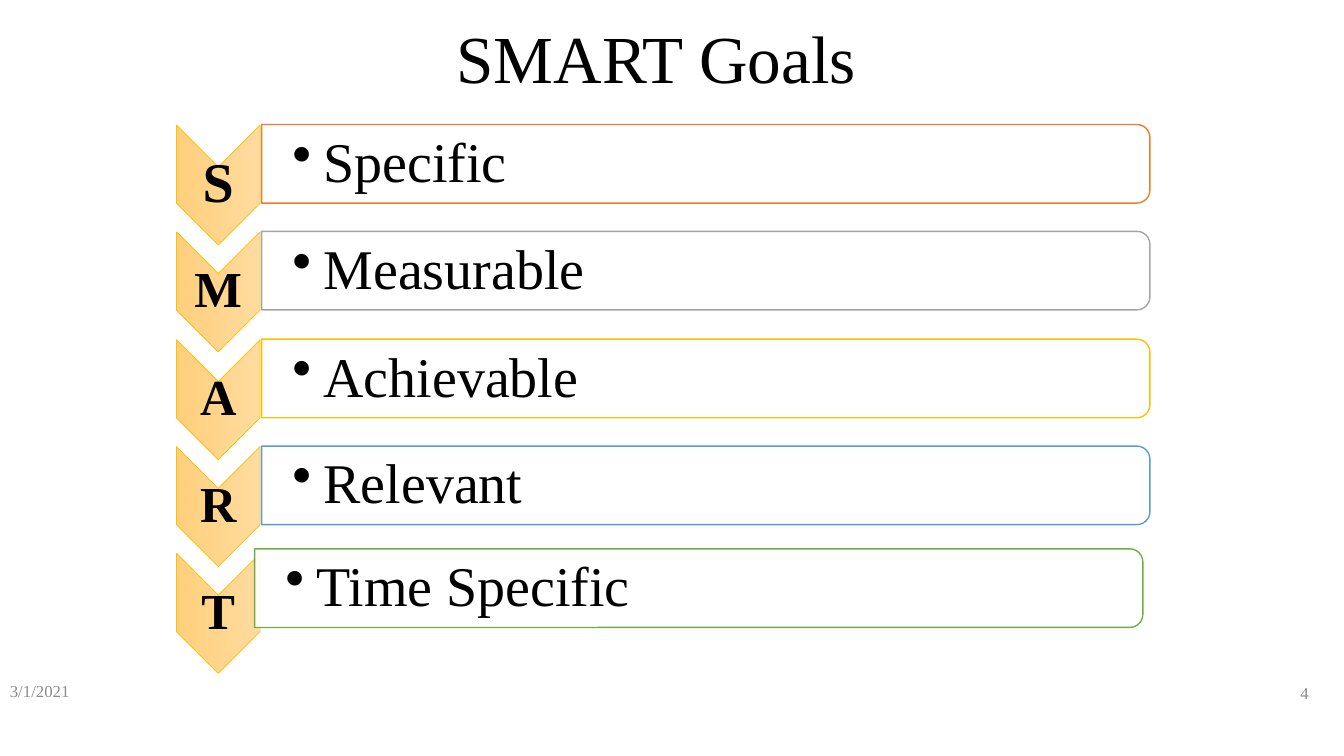
from lxml import etree
from pptx import Presentation
from pptx.dml.color import RGBColor
from pptx.enum.shapes import MSO_SHAPE
from pptx.enum.text import MSO_ANCHOR, PP_ALIGN
from pptx.oxml.ns import qn
from pptx.util import Pt

PX = 9144  # 100 px to the inch
FONT = "Times New Roman"
CHEVRON, BAR = MSO_SHAPE.CHEVRON, MSO_SHAPE.ROUND_2_SAME_RECTANGLE
MIDDLE = MSO_ANCHOR.MIDDLE
LEFT, CENTER, RIGHT = PP_ALIGN.LEFT, PP_ALIGN.CENTER, PP_ALIGN.RIGHT
COLORS = {
    "text": "000000", "footer": "8C8C8C", "bar": "FFFFFF",
    "chevron start": "FFDB9E", "chevron end": "FFD07C", "chevron line": "FFC000",
}
# letter, letter size, goal, bar outline, shift of the bar in px
GOALS = [
    ("S", 40, "Specific", "ED7D31", (0, 0)),
    ("M", 36, "Measurable", "A5A5A5", (0, 0)),
    ("A", 36, "Achievable", "FFC000", (0, 0)),
    ("R", 36, "Relevant", "5B9BD5", (0, 0)),
    ("T", 36, "Time Specific", "70AD47", (-7, -4)),
]
ROW_TOP, ROW_PITCH = 142, 106.3
BULLET_INDENT = 31


def add_text(box, text, size, align, color="text", bold=False, insets=None):
    """Place the box and write one paragraph in it; insets are (left, other sides)."""
    shape = slide.shapes.add_textbox(*(value * PX for value in box))
    frame = shape.text_frame
    frame.word_wrap = True
    frame.vertical_anchor = MIDDLE
    if insets:
        frame.margin_left = insets[0] * PX
        frame.margin_top = frame.margin_right = frame.margin_bottom = insets[1] * PX
    frame.text = text
    paragraph = frame.paragraphs[0]
    paragraph.alignment = align
    font = paragraph.runs[0].font
    font.name, font.size, font.bold = FONT, Pt(size), bold
    font.color.rgb = RGBColor.from_string(COLORS[color])
    return paragraph


def add_rotated_shape(kind, box, line_color, line_width):
    shape = slide.shapes.add_shape(kind, *(value * PX for value in box))
    shape.rotation = 90
    shape.shadow.inherit = False
    shape.line.color.rgb = RGBColor.from_string(line_color)
    shape.line.width = Pt(line_width)
    return shape


presentation = Presentation()
presentation.slide_width = 1333 * PX
presentation.slide_height = 750 * PX
slide = presentation.slides.add_slide(presentation.slide_layouts[5])

title = slide.shapes.title
title.left, title.top, title.width, title.height = 79 * PX, 0, 1144 * PX, 123 * PX
title.text_frame.text = "SMART Goals"
title.text_frame.vertical_anchor = MIDDLE
title_paragraph = title.text_frame.paragraphs[0]
title_paragraph.alignment = CENTER
title_paragraph.line_spacing = 0.9
title_font = title_paragraph.runs[0].font
title_font.name, title_font.size = FONT, Pt(48)
title_font.color.rgb = RGBColor.from_string(COLORS["text"])

add_text((1008, 667, 300, 40), "4", 12, RIGHT, "footer")
add_text((0, 665, 300, 40), "3/1/2021", 12, LEFT, "footer")

for row, (letter, letter_size, goal, outline, (shift_x, shift_y)) in enumerate(GOALS):
    top = round(ROW_TOP + row * ROW_PITCH)

    chevron = add_rotated_shape(CHEVRON, (157, top, 119, 83), COLORS["chevron line"], 0.5)
    chevron.fill.gradient()
    chevron.fill.gradient_angle = 270
    for stop, name in zip(chevron.fill.gradient_stops, ("chevron start", "chevron end")):
        stop.color.rgb = RGBColor.from_string(COLORS[name])
    letter_paragraph = add_text((175, top + 23, 83, 36), letter, letter_size, CENTER,
                                bold=True, insets=(3, 3))
    letter_paragraph.line_spacing = 0.9

    bar = add_rotated_shape(BAR, (661 + shift_x, top - 420 + shift_y, 78, 881), outline, 1)
    bar.fill.solid()
    bar.fill.fore_color.rgb = RGBColor.from_string(COLORS["bar"])
    bar_color = bar.fill._xPr.find(qn("a:solidFill"))[0]
    etree.SubElement(bar_color, qn("a:alpha"), val="90000")

    goal_paragraph = add_text((259 + shift_x, top - 14 + shift_y, 877, 70), goal, 40, LEFT,
                              insets=(BULLET_INDENT, 3))
    goal_paragraph.line_spacing = 0.9
    properties = goal_paragraph._p.get_or_add_pPr()
    properties.set("marL", str(BULLET_INDENT * PX))
    properties.set("indent", str(-BULLET_INDENT * PX))
    etree.SubElement(properties, qn("a:buChar"), char="•")

presentation.save("out.pptx")
